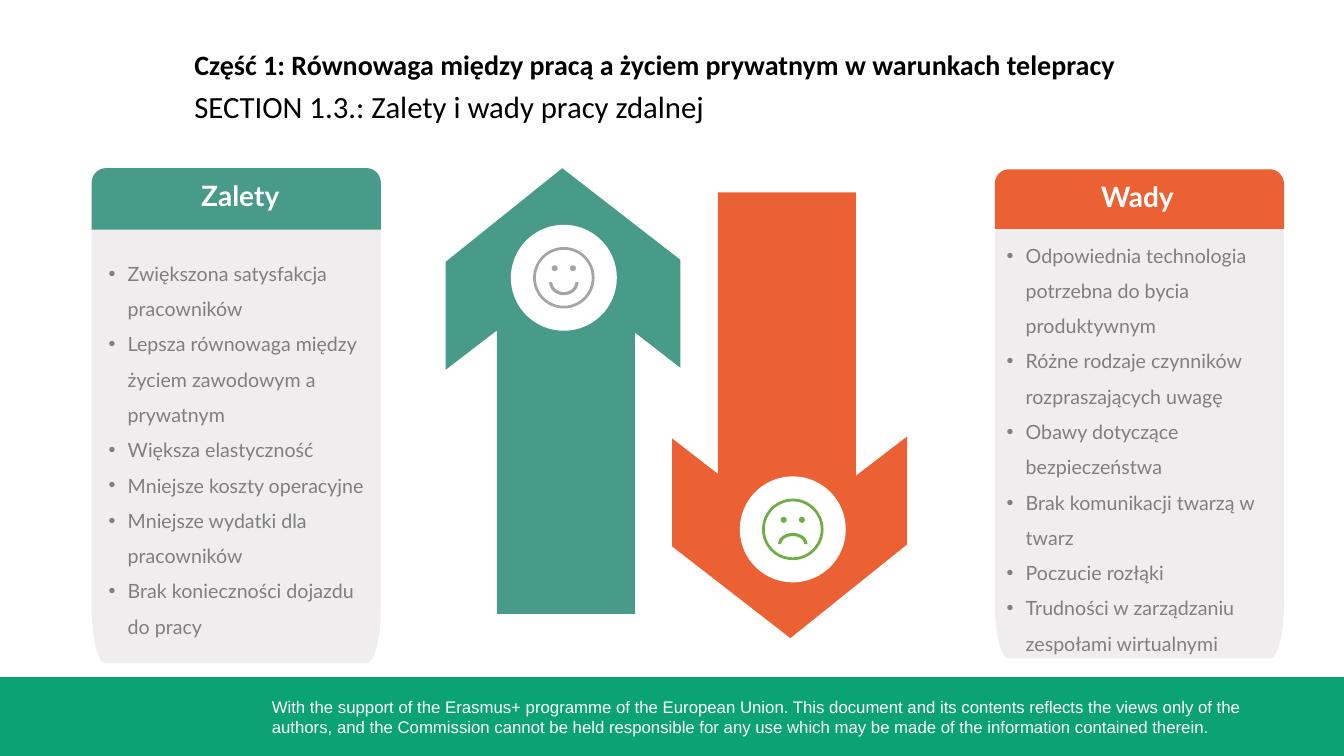
from math import cos, pi, sin

from lxml.etree import SubElement
from pptx import Presentation
from pptx.dml.color import RGBColor
from pptx.enum.shapes import MSO_SHAPE
from pptx.enum.text import MSO_ANCHOR, MSO_AUTO_SIZE, PP_ALIGN
from pptx.oxml.ns import qn
from pptx.util import Cm, Pt

HUES = {
    "teal": "489B88", "orange": "EB6133", "green": "0CA373", "lime": "70AD47",
    "gray": "A5A5A5", "text": "7F7F7F", "pale": "EFEDED",
    "white": "FFFFFF", "black": "000000",
}
HEAD = {"size": Pt(20), "name": "Lato", "bold": True}
ITEM = {"size": Pt(14), "name": "Lato"}
PART = {"size": Pt(20), "name": "Calibri", "bold": True}
TOPIC = {"size": Pt(22), "name": "Calibri"}
NOTE = {"size": Pt(12), "name": "Arial"}

PROS = [
    "Zwiększona satysfakcja pracowników",
    "Lepsza równowaga między życiem zawodowym a prywatnym",
    "Większa elastyczność",
    "Mniejsze koszty operacyjne",
    "Mniejsze wydatki dla pracowników",
    "Brak konieczności dojazdu do pracy",
]
CONS = [
    "Odpowiednia technologia potrzebna do bycia produktywnym",
    "Różne rodzaje czynników rozpraszających uwagę",
    "Obawy dotyczące bezpieczeństwa",
    "Brak komunikacji twarzą w twarz",
    "Poczucie rozłąki",
    "Trudności w zarządzaniu zespołami wirtualnymi",
]
ARROW = [
    (17.15, 6.55), (14.17, 4.24), (11.23, 6.6), (11.23, 9.32), (12.52, 8.33),
    (12.52, 15.47), (16, 15.47), (16, 8.38), (17.15, 9.27),
]


def paint(shape, hue):
    shape.shadow.inherit = False
    shape.fill.solid()
    shape.fill.fore_color.rgb = RGBColor.from_string(HUES[hue])
    shape.line.fill.background()


def outline(slide, dots, hue):
    dots = [(Cm(x), Cm(y)) for x, y in dots]
    pen = slide.shapes.build_freeform(*dots[0], scale=1.0)
    pen.add_line_segments(dots[1:], close=True)
    paint(pen.convert_to_shape(), hue)


def disc(slide, x, y, size, hue, kind=MSO_SHAPE.OVAL):
    """Round shape centred on x, y."""
    shape = slide.shapes.add_shape(
        kind, Cm(x - size / 2), Cm(y - size / 2), Cm(size), Cm(size))
    paint(shape, hue)
    return shape


def arc(x, y, wide, high, start, end, steps=16):
    """Points on an ellipse; angles in half turns, clockwise from the right."""
    turns = [pi * (start + (end - start) * i / steps) for i in range(steps + 1)]
    return [(x + wide * cos(t), y + high * sin(t)) for t in turns]


def label(slide, box, lines, style, hue, align=PP_ALIGN.LEFT,
          pad=(0.25, 0.13), bullet=False):
    shape = slide.shapes.add_textbox(*map(Cm, box))
    frame = shape.text_frame
    side, edge = map(Cm, pad)
    form = {
        "word_wrap": True, "auto_size": MSO_AUTO_SIZE.SHAPE_TO_FIT_TEXT,
        "vertical_anchor": MSO_ANCHOR.TOP, "margin_left": side,
        "margin_right": side, "margin_top": edge, "margin_bottom": edge,
    }
    for key, value in form.items():
        setattr(frame, key, value)
    for i, line in enumerate(lines):
        para = frame.add_paragraph() if i else frame.paragraphs[0]
        para.alignment = align
        if bullet:
            para.line_spacing = 1.5
            dot(para, hue)
        run = para.add_run()
        run.text = line
        for key, value in style.items():
            setattr(run.font, key, value)
        run.font.color.rgb = RGBColor.from_string(HUES[hue])


def dot(para, hue):
    props = para._p.get_or_add_pPr()
    props.set("marL", str(Cm(0.48)))
    props.set("indent", str(-Cm(0.48)))
    tint = SubElement(props, qn("a:buClr"))
    SubElement(tint, qn("a:srgbClr"), val=HUES[hue])
    SubElement(props, qn("a:buFont"), typeface="Arial")
    SubElement(props, qn("a:buChar"), char="•")


def card(slide, x, y, high, head, hue):
    """Pale panel with a coloured cap."""
    wide, bend, top, foot, cap = 7.29, 0.35, 1.32, 1.42, 0.38
    left, right, low = x + bend, x + wide - bend, y + high
    outline(slide, arc(left, y + top, bend, top, 1, 1.5)
            + arc(right, y + top, bend, top, 1.5, 2)
            + arc(right, low - foot, bend, foot, 0, 0.5)
            + arc(left, low - foot, bend, foot, 0.5, 1), "pale")
    outline(slide, arc(left, y + cap, bend, cap, 1, 1.5)
            + arc(right, y + cap, bend, cap, 1.5, 2)
            + [(x + wide, y + head), (x, y + head)], hue)


def face(slide, x, y, hue, drop, high, turn):
    """Badge with a face; turn is 0 for a smile and 1 for a frown."""
    disc(slide, x, y, 2.67, "white")
    disc(slide, x, y, 1.55, hue, MSO_SHAPE.DONUT).adjustments[0] = 0.045
    for side in (-0.23, 0.23):
        disc(slide, x + side, y - 0.24, 0.15, hue)
    outline(slide, arc(x, y + drop, 0.37, high, turn, turn + 1)
            + arc(x, y + drop, 0.29, high - 0.08, turn + 1, turn), hue)


def main():
    deck = Presentation()
    deck.slide_width, deck.slide_height = Cm(33.87), Cm(19.05)
    slide = deck.slides.add_slide(deck.slide_layouts[6])

    # Footer
    outline(slide, [(0, 17.07), (33.87, 17.07), (33.87, 19.05), (0, 19.05)],
            "green")
    label(slide, (6.6, 17.42, 26.47, 1.27), [
        "With the support of the Erasmus+ programme of the European Union. "
        "This document and its contents reflects the views only of the "
        "authors, and the Commission cannot be held responsible for any use "
        "which may be made of the information contained therein."],
        NOTE, "white")

    # Arrows: the second is the first turned half way round
    outline(slide, ARROW, "teal")
    face(slide, 14.21, 7, "gray", 0.11, 0.33, 0)
    outline(slide, [(34.09 - x, 20.32 - y) for x, y in ARROW], "orange")
    face(slide, 19.98, 13.34, "lime", 0.37, 0.28, 1)

    # Lists
    card(slide, 2.31, 4.24, 12.47, 1.55, "teal")
    card(slide, 25.07, 4.27, 12.32, 1.5, "orange")
    for x, y, name in ((2.46, 4.37, "Zalety"), (25.07, 4.39, "Wady")):
        label(slide, (x, y, 7.19, 1.12), [name], HEAD, "white",
              PP_ALIGN.CENTER)
    for box, items in (((2.44, 6.15, 7.19, 10.57), PROS),
                       ((25.07, 5.69, 7.75, 11.07), CONS)):
        label(slide, box, items, ITEM, "text", pad=(0.3, 0.15), bullet=True)

    # Titles
    label(slide, (4.9, 2.18, 16.97, 0.99),
          ["SECTION 1.3.: Zalety i wady pracy zdalnej"],
          TOPIC, "black", pad=(0, 0.03))
    label(slide, (4.9, 1.17, 28.9, 0.89),
          ["Część 1: Równowaga między pracą a życiem prywatnym w warunkach "
           "telepracy"], PART, "black", pad=(0, 0.03))

    deck.save("out.pptx")


if __name__ == "__main__":
    main()
